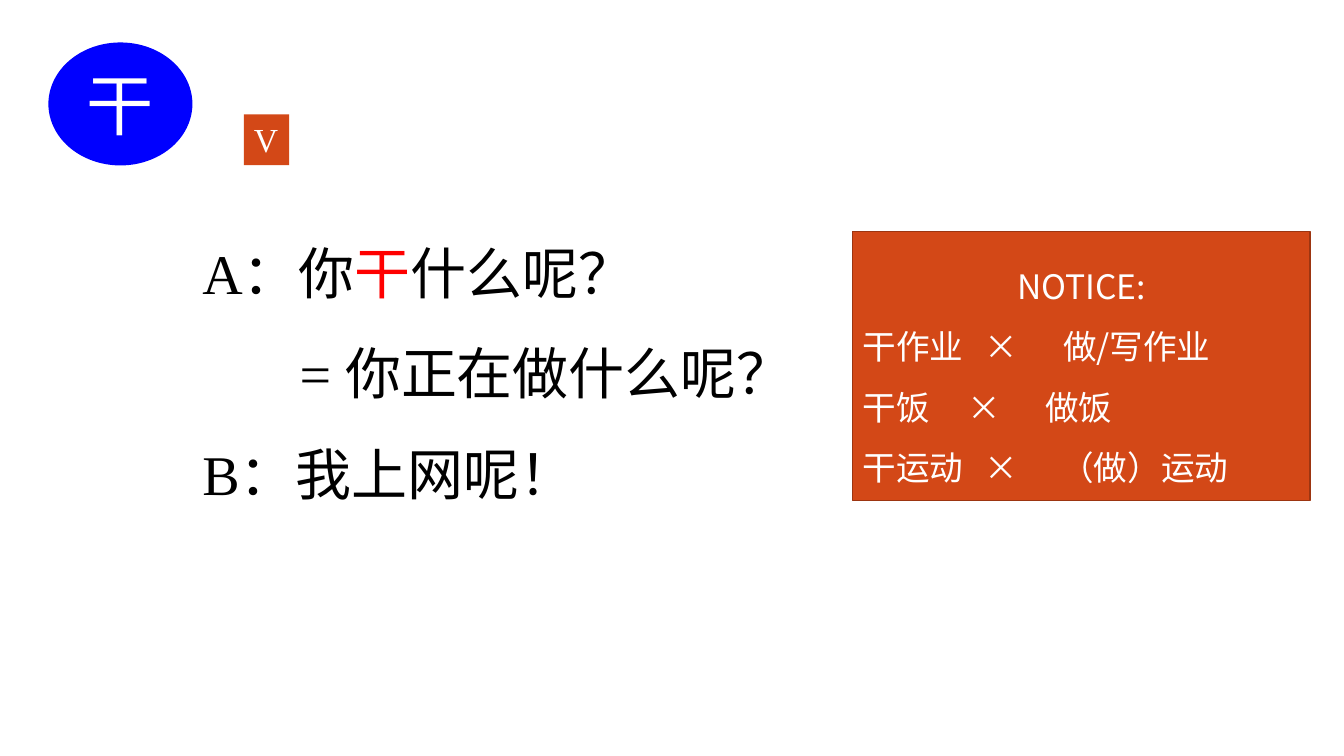
from lxml import etree
from pptx import Presentation
from pptx.dml.color import RGBColor
from pptx.enum.lang import MSO_LANGUAGE_ID
from pptx.enum.shapes import MSO_SHAPE
from pptx.enum.text import MSO_ANCHOR, PP_ALIGN
from pptx.oxml.ns import qn
from pptx.util import Cm, Pt

OVAL, RECTANGLE = MSO_SHAPE.OVAL, MSO_SHAPE.RECTANGLE
MIDDLE, TOP = MSO_ANCHOR.MIDDLE, MSO_ANCHOR.TOP
LEFT, CENTER = PP_ALIGN.LEFT, PP_ALIGN.CENTER
CHINESE = MSO_LANGUAGE_ID.SIMPLIFIED_CHINESE
SANS, SERIF = "Noto Sans CJK SC", "Times New Roman"
BLUE, ORANGE, RUST = "0000FF", "D34817", "9C3511"
WHITE, BLACK, RED = "FFFFFF", "000000", "FF0000"

DIALOGUE = [
    (0, [("A：你", BLACK), ("干", RED), ("什么呢？", BLACK)]),
    (2.45, [("= 你正在做什么呢？", BLACK)]),
    (0, [("B：我上网呢！", BLACK)]),
]
NOTICE = [
    ("干作业\t×\t做/写作业", (3.08, 5.05)),
    ("干饭\t×\t做饭", (2.65, 4.6)),
    ("干运动\t×\t（做）运动", (3.08, 4.98)),
]


def color(value):
    return RGBColor.from_string(value)


def style_span(span, size, font, text_color):
    span.font.size = Pt(size)
    span.font.name = font
    span.font.color.rgb = color(text_color)
    span.font.language_id = CHINESE
    east_asian = etree.SubElement(span.font._element, qn("a:ea"))
    east_asian.set("typeface", SANS)


def style_para(para, size, font, align=LEFT, spacing=1.0):
    para.alignment = align
    para.line_spacing = spacing
    for span in para.runs:
        style_span(span, size, font, WHITE)


def set_tabs(para, stops):
    tabs = etree.SubElement(para._p.get_or_add_pPr(), qn("a:tabLst"))
    for stop in stops:
        etree.SubElement(tabs, qn("a:tab"), pos=str(Cm(stop)), algn="l")


def add_filled(page, kind, left, top, width, height, fill, line=None):
    shape = page.shapes.add_shape(kind, Cm(left), Cm(top), Cm(width), Cm(height))
    shape.shadow.inherit = False
    shape.fill.solid()
    shape.fill.fore_color.rgb = color(fill)
    if line:
        shape.line.color.rgb = color(line)
        shape.line.width = Pt(1)
    else:
        shape.line.fill.background()
    return shape


def add_label(shape, text, size, font, align, anchor, wrap):
    frame = shape.text_frame
    frame.text = text
    frame.word_wrap = wrap
    frame.vertical_anchor = anchor
    style_para(frame.paragraphs[0], size, font, align)


def add_dialogue(page):
    box = page.shapes.add_textbox(Cm(4.85), Cm(5.03), Cm(18.77), Cm(7.95))
    frame = box.text_frame
    frame.word_wrap = True
    for index, (indent, parts) in enumerate(DIALOGUE):
        para = frame.add_paragraph() if index else frame.paragraphs[0]
        para.line_spacing = 1.5
        para._p.get_or_add_pPr().set("marL", str(Cm(indent)))
        for text, text_color in parts:
            span = para.add_run()
            span.text = text
            style_span(span, 40, SERIF, text_color)


def add_notice(page):
    box = add_filled(page, RECTANGLE, 21.49, 5.84, 11.53, 6.78, ORANGE, RUST)
    frame = box.text_frame
    frame.word_wrap = True
    frame.vertical_anchor = MIDDLE
    frame.text = "NOTICE:"
    style_para(frame.paragraphs[0], 24, SANS, CENTER, 1.5)
    for text, stops in NOTICE:
        para = frame.add_paragraph()
        para.text = text
        set_tabs(para, stops)
        style_para(para, 24, SANS, LEFT, 1.5)


def main():
    deck = Presentation()
    deck.slide_width, deck.slide_height = Cm(33.87), Cm(19.05)
    page = deck.slides.add_slide(deck.slide_layouts[6])
    word = add_filled(page, OVAL, 1.22, 1.07, 3.63, 3.1, BLUE)
    add_label(word, "干", 48, SANS, CENTER, MIDDLE, True)
    add_dialogue(page)
    add_notice(page)
    verb = add_filled(page, RECTANGLE, 6.15, 2.88, 1.14, 1.28, ORANGE)
    add_label(verb, "V", 24, SERIF, LEFT, TOP, False)
    deck.save("out.pptx")


if __name__ == "__main__":
    main()
